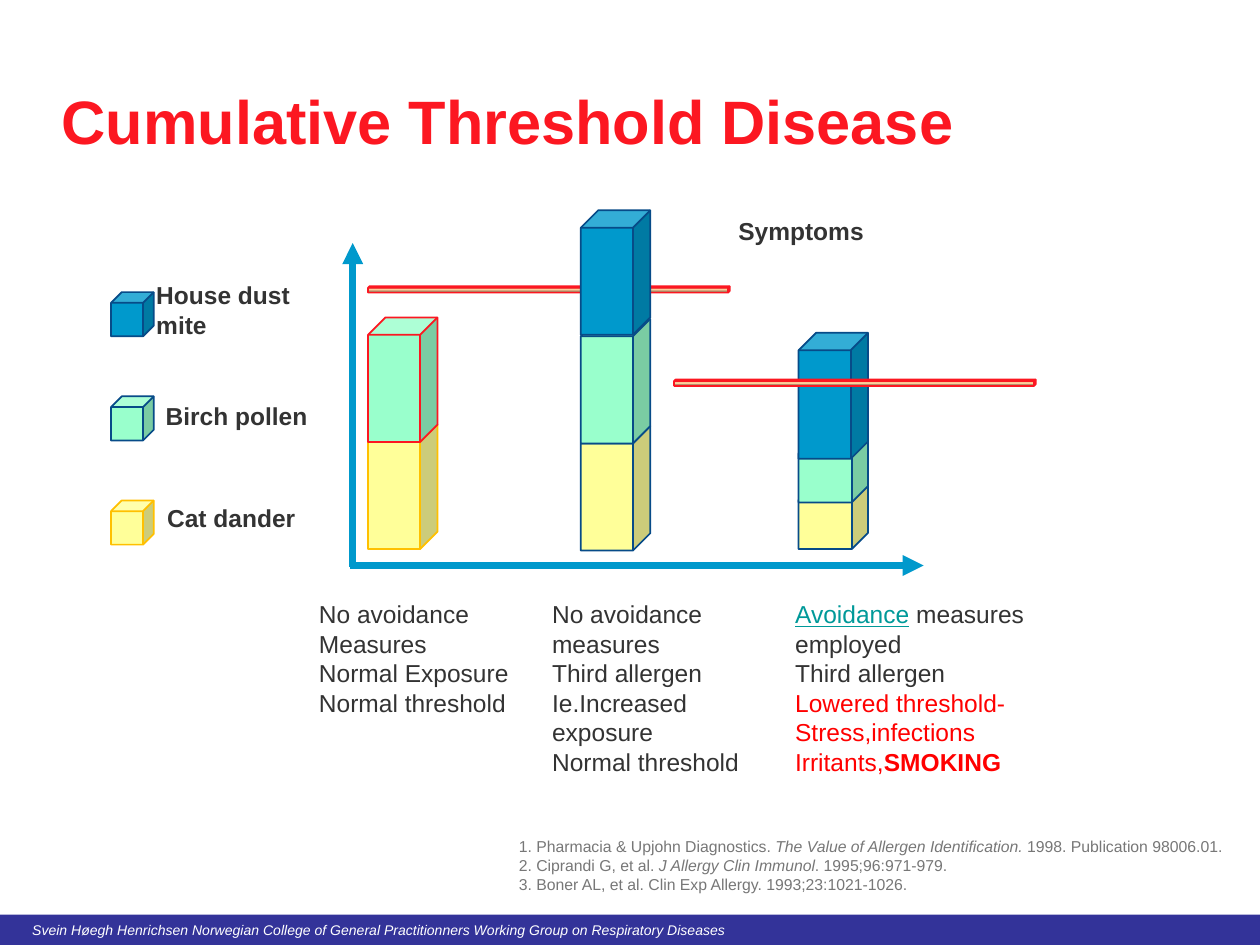
from copy import deepcopy
from dataclasses import dataclass

from lxml import etree
from pptx import Presentation
from pptx.dml.color import RGBColor
from pptx.enum.shapes import MSO_CONNECTOR, MSO_SHAPE
from pptx.enum.text import MSO_ANCHOR, PP_ALIGN
from pptx.oxml.ns import qn
from pptx.util import Cm, Pt

CUBE = MSO_SHAPE.CUBE
RECTANGLE = MSO_SHAPE.RECTANGLE
STRAIGHT = MSO_CONNECTOR.STRAIGHT
LEFT, CENTER = PP_ALIGN.LEFT, PP_ALIGN.CENTER
TOP, MIDDLE = MSO_ANCHOR.TOP, MSO_ANCHOR.MIDDLE


@dataclass(frozen=True)
class Theme:
    font: str = "Arial"
    title_size: int = 35
    text_size: int = 14
    reference_size: int = 9
    footer_size: int = 8
    white: str = "FFFFFF"
    text: str = "333333"
    reference: str = "777777"
    footer: str = "333399"
    red: str = "FC1721"
    warning: str = "FF0000"
    link: str = "009999"
    cat: str = "FFFF99"
    birch: str = "99FFCC"
    mite: str = "0099CC"
    navy: str = "074B88"
    gold: str = "FFC000"
    band_edge: str = "7F664C"
    band_middle: str = "FFCC99"


theme = Theme()


def write(frame, paragraphs, size, color, align=LEFT, anchor=TOP):
    frame.word_wrap = True
    frame.vertical_anchor = anchor
    for number, pieces in enumerate(paragraphs):
        paragraph = frame.add_paragraph() if number else frame.paragraphs[0]
        paragraph.alignment = align
        for wording, style in pieces:
            run = paragraph.add_run()
            run.text = wording
            run.font.name = theme.font
            run.font.size = Pt(size)
            run.font.bold = style.get("bold", False)
            run.font.italic = style.get("italic", False)
            run.font.underline = style.get("underline", False)
            run.font.color.rgb = RGBColor.from_string(style.get("color", color))


def add_cube(left, top, width, height, fill, edge):
    cube = slide.shapes.add_shape(CUBE, Cm(left), Cm(top), Cm(width), Cm(height))
    cube.shadow.inherit = False
    cube.fill.solid()
    cube.fill.fore_color.rgb = RGBColor.from_string(fill)
    cube.line.color.rgb = RGBColor.from_string(edge)
    cube.line.width = Pt(1)
    return cube


deck = Presentation()
deck.slide_width, deck.slide_height = Cm(25.4), Cm(19.05)
slide = deck.slides.add_slide(deck.slide_layouts[5])
slide.background.fill.solid()
slide.background.fill.fore_color.rgb = RGBColor.from_string(theme.white)

footer = slide.shapes.add_shape(RECTANGLE, 0, Cm(18.44), deck.slide_width, Cm(0.61))
footer.shadow.inherit = False
footer.fill.solid()
footer.fill.fore_color.rgb = RGBColor.from_string(theme.footer)
footer.line.fill.background()
footer.text_frame.margin_left = Cm(0.65)
credit = "Svein Høegh Henrichsen Norwegian College of General Practitionners Working Group on Respiratory Diseases"
write(footer.text_frame, [[(credit, {"italic": True})]], theme.footer_size, theme.white, anchor=MIDDLE)

title = slide.shapes.title
title.left, title.top, title.width, title.height = Cm(0.99), Cm(1.5), Cm(19.96), Cm(2.11)
title.text_frame.margin_bottom = Cm(0.38)
write(title.text_frame, [[("Cumulative Threshold Disease", {"bold": True})]],
      theme.title_size, theme.red, anchor=MIDDLE)

references = slide.shapes.add_textbox(Cm(10.21), Cm(16.74), Cm(15.19), Cm(1.8))
write(references.text_frame, [
    [("1. Pharmacia & Upjohn Diagnostics. ", {}),
     ("The Value of Allergen Identification. ", {"italic": True}),
     ("1998. Publication 98006.01.", {})],
    [("2. Ciprandi G, et al. ", {}),
     ("J Allergy Clin Immunol", {"italic": True}),
     (". 1995;96:971-979.", {})],
    [("3. Boner AL, et al. Clin Exp Allergy. 1993;23:1021-1026.", {})],
], theme.reference_size, theme.reference)
for reference in references.text_frame.paragraphs:
    properties = reference._p.get_or_add_pPr()
    properties.set("marL", str(Cm(1.27)))
    properties.set("indent", str(-Cm(1.27)))

normal_exposure = (7.42, [
    (8.56, 2.51, theme.cat, theme.gold),
    (6.4, 2.51, theme.birch, theme.red),
])
increased_exposure = (11.71, [
    (8.59, 2.51, theme.cat, theme.navy),
    (6.43, 2.51, theme.birch, theme.navy),
    (4.24, 2.51, theme.mite, theme.navy),
])
avoidance = (16.1, [
    (9.75, 1.32, theme.cat, theme.navy),
    (8.81, 1.32, theme.birch, theme.navy),
    (6.71, 2.54, theme.mite, theme.navy),
])
normal_threshold = (7.42, 5.77)
lowered_threshold = (13.59, 7.65)

for left, segments in (normal_exposure, avoidance):
    for top, height, fill, edge in segments:
        add_cube(left, top, 1.4, height, fill, edge)

thresholds = [add_cube(*normal_threshold, 7.29, 0.13, theme.band_middle, theme.red)]
left, segments = increased_exposure
for top, height, fill, edge in segments:
    add_cube(left, top, 1.4, height, fill, edge)
thresholds.append(add_cube(*lowered_threshold, 7.29, 0.13, theme.band_middle, theme.red))

for threshold in thresholds:
    threshold.fill.gradient()
    threshold.fill.gradient_angle = 270
    for stop in threshold.fill.gradient_stops:
        stop.color.rgb = RGBColor.from_string(theme.band_edge)
    first_stop = threshold._element.spPr.find(".//" + qn("a:gs"))
    middle_stop = deepcopy(first_stop)
    middle_stop.set("pos", "50000")
    middle_stop.find(qn("a:srgbClr")).set("val", theme.band_middle)
    first_stop.addnext(middle_stop)

for tip_x, tip_y, origin_x, origin_y in ((7.11, 4.9, 7.11, 11.43), (18.62, 11.4, 7.06, 11.4)):
    axis = slide.shapes.add_connector(STRAIGHT, Cm(tip_x), Cm(tip_y), Cm(origin_x), Cm(origin_y))
    axis.line.color.rgb = RGBColor.from_string(theme.mite)
    axis.line.width = Pt(4)
    etree.SubElement(axis.line._get_or_add_ln(), qn("a:headEnd"), type="triangle")
    etree.SubElement(axis._element.spPr, qn("a:effectLst"))

legend = [
    ("House dust mite", 2.9, 4.2, 5.84, theme.mite, theme.navy),
    ("Birch pollen", 3.09, 3.5, 7.98, theme.birch, theme.navy),
    ("Cat dander", 3.12, 3.2, 10.03, theme.cat, theme.gold),
]
for row, (allergen, left, width, top, fill, edge) in enumerate(legend):
    add_cube(2.24, 5.89 + row * 2.1, 0.86, 0.89, fill, edge)
    label = slide.shapes.add_textbox(Cm(left), Cm(top), Cm(width), Cm(0.81))
    write(label.text_frame, [[(allergen, {"bold": True})]], theme.text_size, theme.text, anchor=MIDDLE)

symptoms = slide.shapes.add_textbox(Cm(14.15), Cm(4.24), Cm(4), Cm(0.85))
write(symptoms.text_frame, [[("Symptoms", {"bold": True})]], theme.text_size, theme.text, CENTER)

warning = {"color": theme.warning}
scenarios = [
    (6.3, 4.14, 2.64, [
        [("No avoidance", {})],
        [("Measures", {})],
        [("Normal Exposure", {})],
        [("Normal threshold", {})],
    ]),
    (11, 4.29, 3.84, [
        [("No avoidance", {})],
        [("measures", {})],
        [("Third allergen", {})],
        [("Ie.Increased exposure", {})],
        [("Normal threshold", {})],
    ]),
    (15.9, 4.95, 3.84, [
        [("Avoidance", {"color": theme.link, "underline": True}), (" measures", {})],
        [("employed", {})],
        [("Third allergen", {})],
        [("Lowered threshold-", warning)],
        [("Stress,infections", warning)],
        [("Irritants,", warning), ("SMOKING", {**warning, "bold": True})],
    ]),
]
for left, width, height, conditions in scenarios:
    scenario = slide.shapes.add_textbox(Cm(left), Cm(11.96), Cm(width), Cm(height))
    scenario.text_frame.margin_left = scenario.text_frame.margin_right = Cm(0.13)
    write(scenario.text_frame, conditions, theme.text_size, theme.text)

deck.save("out.pptx")
